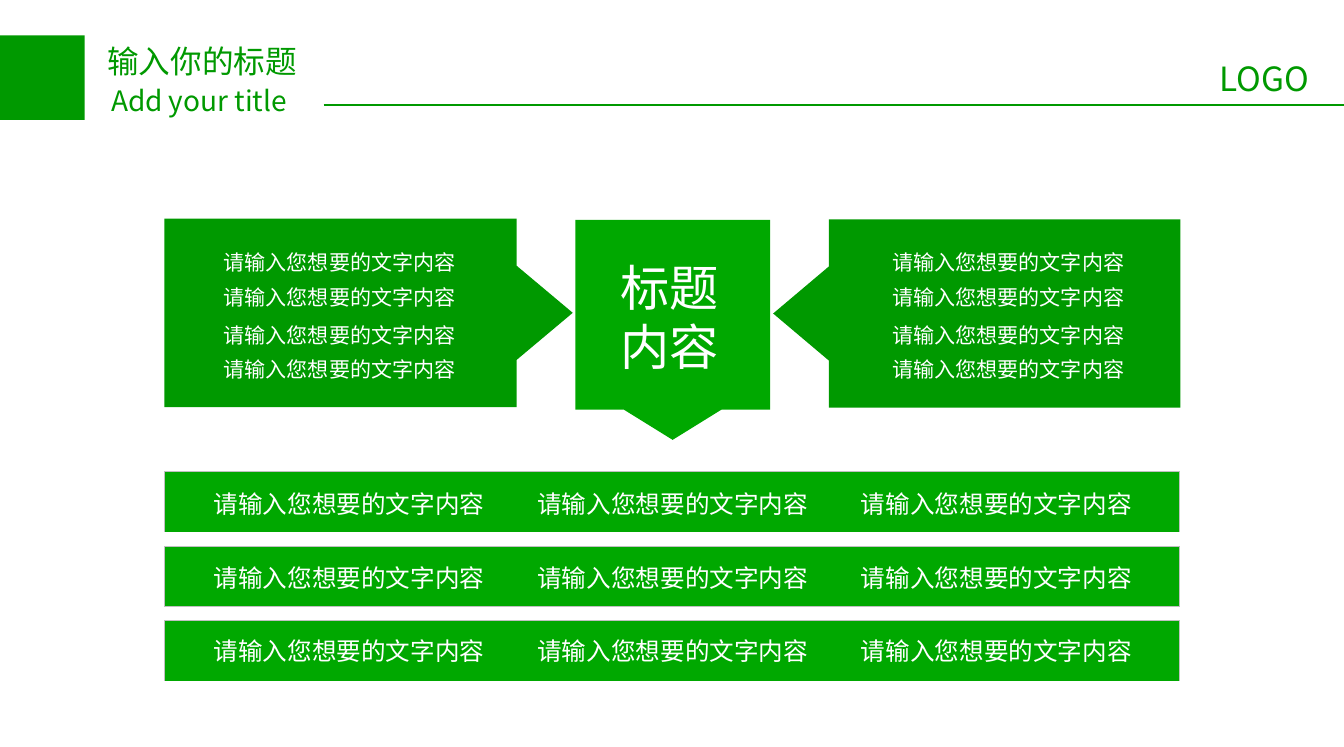
from lxml.etree import SubElement
from pptx import Presentation
from pptx.dml.color import RGBColor
from pptx.enum.shapes import MSO_CONNECTOR, MSO_SHAPE
from pptx.enum.text import MSO_ANCHOR, MSO_AUTO_SIZE, PP_ALIGN
from pptx.oxml.ns import qn
from pptx.util import Pt

PX = 9144
FONT = "Noto Sans CJK SC"
DARK_GREEN = "009900"
GREEN = "00A800"
WHITE = "FFFFFF"
SILVER = "C0C0C0"
CONTENT = "请输入您想要的文字内容"


def px(*lengths):
    return [length * PX for length in lengths]


def paint(color_format, color):
    color_format.rgb = RGBColor.from_string(color)


def add_block(slide, preset, box, color, outline=None):
    block = slide.shapes.add_shape(preset, *px(*box))
    block.shadow.inherit = False
    block.fill.solid()
    paint(block.fill.fore_color, color)
    if outline:
        paint(block.line.color, outline)
        block.line.width = Pt(0.25)
    else:
        block.line.fill.background()
    return block


def add_callout(slide, box, rotation, head):
    color = GREEN if rotation == 180 else DARK_GREEN
    callout = add_block(slide, MSO_SHAPE.UP_ARROW_CALLOUT, box, color)
    callout.rotation = rotation
    for index, value in enumerate((0.338, 0.25, head, 0.863)):
        callout.adjustments[index] = value


def add_rule(slide, left, right, y, color, weight):
    rule = slide.shapes.add_connector(MSO_CONNECTOR.STRAIGHT, *px(left, y, right, y))
    paint(rule.line.color, color)
    rule.line.width = Pt(weight)
    SubElement(rule._element.spPr, qn("a:effectLst"))


def add_label(slide, box, lines, size, color=WHITE, insets=(8, 4), wrap=True):
    label = slide.shapes.add_textbox(*px(*box))
    frame = label.text_frame
    frame.word_wrap = wrap
    frame.auto_size = MSO_AUTO_SIZE.SHAPE_TO_FIT_TEXT
    frame.vertical_anchor = MSO_ANCHOR.TOP
    frame.margin_left = frame.margin_right = insets[0] * PX
    frame.margin_top = frame.margin_bottom = insets[1] * PX
    for index, line in enumerate(lines):
        paragraph = frame.add_paragraph() if index else frame.paragraphs[0]
        paragraph.alignment = PP_ALIGN.LEFT
        paragraph.line_spacing = Pt(size * 1.2)
        run = paragraph.add_run()
        run.text = line
        run.font.size = Pt(size)
        run.font.name = FONT
        paint(run.font.color, color)
        SubElement(run.font._element, qn("a:ea")).set("typeface", FONT)


def add_header(slide):
    insets = (10, 5)
    add_block(slide, MSO_SHAPE.RECTANGLE, (0, 28, 67, 67), DARK_GREEN)
    add_label(slide, (75, 28, 173, 40), ["输入你的标题"], 18, DARK_GREEN, insets)
    add_label(slide, (78, 61, 173, 37), ["Add your title"], 16, DARK_GREEN, insets)
    add_rule(slide, 256, 1063, 83, DARK_GREEN, 0.75)
    add_label(slide, (955, 41, 96, 42), ["LOGO"], 19, DARK_GREEN, insets, wrap=False)


def add_side_panel(slide, callout_box, rotation, head, text_left):
    add_callout(slide, callout_box, rotation, head)
    for top in (193, 221, 251, 278):
        add_label(slide, (text_left, top, 219, 28), [CONTENT], 12)


def add_content_rows(slide):
    for row in range(3):
        top = 373 + 59 * row
        add_block(slide, MSO_SHAPE.RECTANGLE, (130, top, 803, 48), GREEN, SILVER)
        add_rule(slide, 130, 933, top + 49, WHITE, 1.5)
        for column in range(3):
            text_box = (161 + 256 * column, 383 + 58 * row, 240, 31)
            add_label(slide, text_box, [CONTENT], 14)


def main():
    deck = Presentation()
    deck.slide_width, deck.slide_height = px(1063, 591)
    slide = deck.slides.add_slide(deck.slide_layouts[6])
    add_header(slide)
    add_side_panel(slide, (217, 86, 149, 323), 90, 0.298, 169)
    add_side_panel(slide, (698, 87, 149, 322), 270, 0.296, 698)
    add_callout(slide, (455, 174, 154, 174), 180, 0.155)
    add_label(slide, (483, 200, 96, 101), ["标题", "内容"], 28)
    add_content_rows(slide)
    deck.save("out.pptx")


if __name__ == "__main__":
    main()
